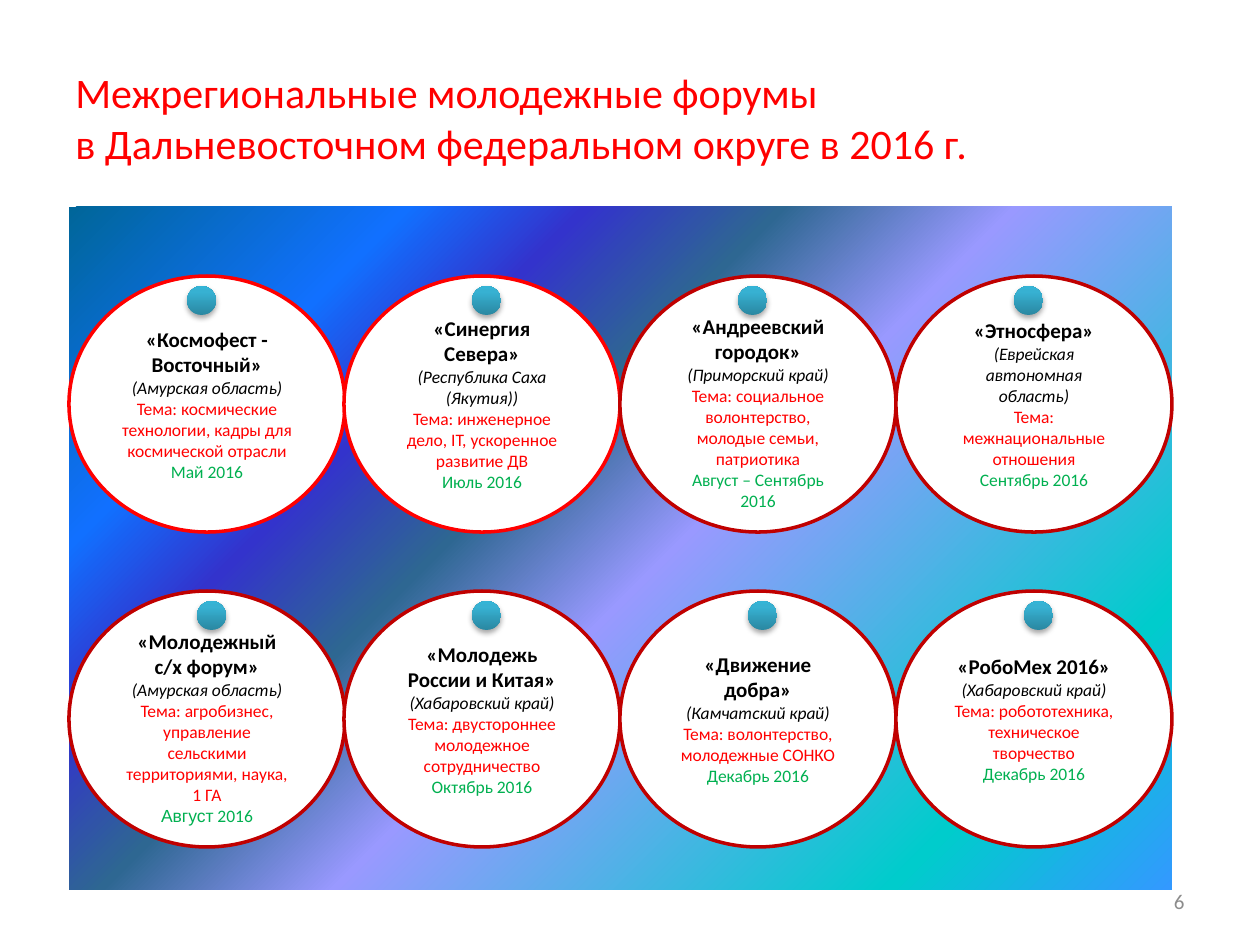
import pptx
import pptx.util
import pptx.oxml
import pptx.oxml.ns
import pptx.dml.color
import pptx.enum.shapes
import pptx.enum.text

PX = 914400 / 126
COLORS = {
    "red": "FF0000", "dark_red": "C00000", "green": "00B050",
    "black": "000000", "white": "FFFFFF", "gray": "8C8C8C",
}
PANEL_STOPS = [(0, "3399FF"), (16, "00CCCC"), (47, "9999FF"), (60, "2E6792"),
               (71, "3333CC"), (81, "1170FF"), (100, "006699")]
PIN_STOPS = [(0, "2A88A2"), (80, "37B1D2"), (100, "34B4D6")]
PANEL_DIRECTION = '<a:path path="circle"><a:fillToRect l="100000" t="100000"/></a:path>'
PIN_DIRECTION = '<a:lin ang="16200000" scaled="0"/>'
PIN_SHADOW = (
    '<a:outerShdw blurRad="40000" dist="23000" dir="5400000" rotWithShape="0">'
    '<a:srgbClr val="000000"><a:alpha val="35000"/></a:srgbClr></a:outerShdw>'
)
NS = pptx.oxml.ns.nsdecls("a")
SHAPES = pptx.enum.shapes.MSO_SHAPE
ALIGN = pptx.enum.text.PP_ALIGN
MIDDLE = pptx.enum.text.MSO_ANCHOR.MIDDLE

LEFT, WIDTH = 69, 1103
FORUM_W, FORUM_H = 276, 256
ROW_TOPS = [276, 591]
PIN = 29

FORUMS = [
    ("«Космофест - Восточный»", "(Амурская область)",
     "Тема: космические технологии, кадры для космической отрасли",
     [("Май 2016", "Calibri")], "red", 118, 6),
    ("«Синергия Севера»", "(Республика Саха (Якутия))",
     "Тема: инженерное дело, IT, ускоренное развитие ДВ",
     [("Июль 2016", "Calibri")], "red", 128, 6),
    ("«Андреевский городок»", "(Приморский край)",
     "Тема: социальное волонтерство, молодые семьи, патриотика",
     [("Август – Сентябрь 2016", "Calibri")], "dark_red", 118, 23),
    ("«Этносфера»", "(Еврейская автономная область)",
     "Тема: межнациональные отношения",
     [("Сентябрь 2016", "Calibri")], "dark_red", 118, 6),
    ("«Молодежный с/х форум»", "(Амурская область)",
     "Тема: агробизнес, управление сельскими территориями, наука, 1 ГА",
     [("Август", "Arial"), (" 2016", "Calibri")], "dark_red", 128, 23),
    ("«Молодежь России и Китая»", "(Хабаровский край)",
     "Тема: двустороннее молодежное сотрудничество",
     [("Октябрь 2016", "Calibri")], "dark_red", 128, 6),
    ("«Движение добра»", "(Камчатский край)",
     "Тема: волонтерство, молодежные СОНКО",
     [("Декабрь 2016", "Calibri")], "dark_red", 128, 6),
    ("«РобоМех 2016»", "(Хабаровский край)",
     "Тема: робототехника, техническое творчество",
     [("Декабрь 2016", "Calibri")], "dark_red", 128, 6),
]


def add_run(paragraph, text, size, color, font="Calibri", bold=False, italic=False):
    run = paragraph.add_run()
    run.text = text
    run.font.size = pptx.util.Pt(size)
    run.font.name = font
    run.font.bold = bold
    run.font.italic = italic
    run.font.color.rgb = pptx.dml.color.RGBColor.from_string(COLORS[color])


def set_gradient(shape, stops, direction):
    shape.fill.gradient()
    gradient = shape.fill._xPr.find(pptx.oxml.ns.qn("a:gradFill"))
    stop_list = "".join(
        f'<a:gs pos="{pos * 1000}"><a:srgbClr val="{color}"/></a:gs>' for pos, color in stops
    )
    gradient.getparent().replace(gradient, pptx.oxml.parse_xml(
        f'<a:gradFill {NS} rotWithShape="1"><a:gsLst>{stop_list}</a:gsLst>{direction}</a:gradFill>'
    ))
    shape.line.fill.background()
    shape.shadow.inherit = False


deck = pptx.Presentation()
deck.slide_width = pptx.util.Inches(10)
deck.slide_height = pptx.util.Inches(7.5)
slide = deck.slides.add_slide(deck.slide_layouts[6])

title = slide.shapes.add_textbox(*[int(v * PX) for v in (63, 38, 1134, 158)])
title.text_frame.word_wrap = True
title.text_frame.vertical_anchor = MIDDLE
heading = title.text_frame.paragraphs[0]
add_run(heading, "Межрегиональные молодежные форумы ", 24, "red")
heading.add_line_break()
add_run(heading, "в Дальневосточном федеральном округе в 2016 г.", 24, "red")

panel = slide.shapes.add_shape(
    SHAPES.RECTANGLE, *[int(v * PX) for v in (LEFT, 207, WIDTH, 683)])
set_gradient(panel, PANEL_STOPS, PANEL_DIRECTION)

for index, (name, region, theme, date, outline, pin_offset, top_inset) in enumerate(FORUMS):
    row, column = divmod(index, 4)
    left, top = LEFT + column * WIDTH // 4, ROW_TOPS[row]
    forum = slide.shapes.add_shape(
        SHAPES.OVAL, *[int(v * PX) for v in (left, top, FORUM_W, FORUM_H)])
    forum.shadow.inherit = False
    forum.fill.solid()
    forum.fill.fore_color.rgb = pptx.dml.color.RGBColor.from_string(COLORS["white"])
    forum.line.color.rgb = pptx.dml.color.RGBColor.from_string(COLORS[outline])
    forum.line.width = pptx.util.Pt(2)
    frame = forum.text_frame
    frame.word_wrap = True
    frame.vertical_anchor = MIDDLE
    frame.margin_top = int(top_inset * PX)

    name_line = frame.paragraphs[0]
    region_line, theme_line, date_line = [frame.add_paragraph() for _ in range(3)]
    for line in frame.paragraphs:
        line.alignment = ALIGN.CENTER
    add_run(name_line, name, 12, "black", bold=True)
    add_run(region_line, region, 10, "black", italic=True)
    add_run(theme_line, theme, 10, "red")
    for text, font in date:
        add_run(date_line, text, 10, "green", font)

    pin = slide.shapes.add_shape(
        SHAPES.OVAL, *[int(v * PX) for v in (left + pin_offset, top + 10, PIN, PIN)])
    set_gradient(pin, PIN_STOPS, PIN_DIRECTION)
    effects = pin._element.spPr.find(pptx.oxml.ns.qn("a:effectLst"))
    effects.getparent().replace(
        effects, pptx.oxml.parse_xml(f"<a:effectLst {NS}>{PIN_SHADOW}</a:effectLst>"))

page_number = slide.shapes.add_textbox(*[int(v * PX) for v in (903, 876, 294, 50)])
page_number.text_frame.word_wrap = True
page_number.text_frame.vertical_anchor = MIDDLE
page_line = page_number.text_frame.paragraphs[0]
page_line.alignment = ALIGN.RIGHT
add_run(page_line, "6", 12, "gray")

deck.save("out.pptx")
